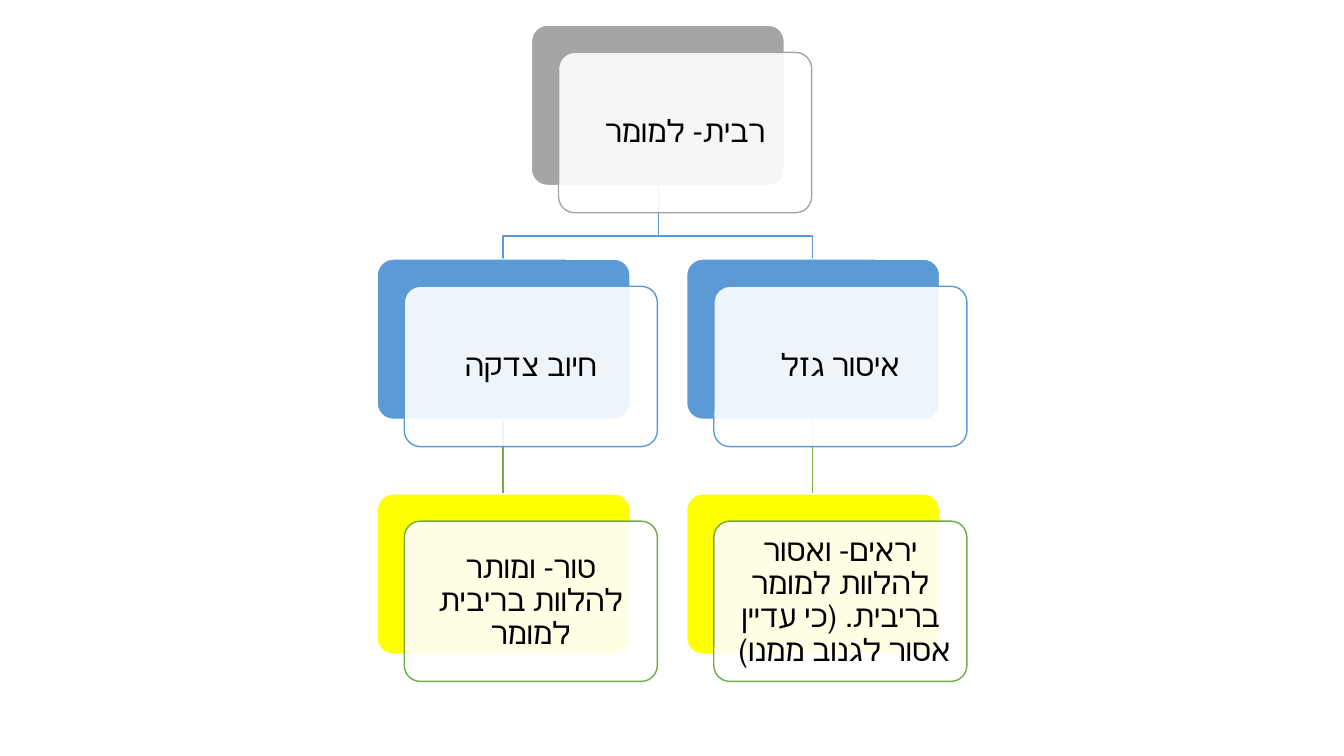
from pptx import Presentation
from pptx.dml.color import RGBColor
from pptx.enum.shapes import MSO_SHAPE
from pptx.enum.text import MSO_ANCHOR, PP_ALIGN
from pptx.oxml.ns import qn
from pptx.util import Pt
from lxml import etree

ROUNDED = MSO_SHAPE.ROUNDED_RECTANGLE
MIDDLE, CENTER = MSO_ANCHOR.MIDDLE, PP_ALIGN.CENTER
PX = 9144  # 100 px to the inch
CARD_W, CARD_H = 251, 159
SHIFT = 27  # offset of the front card from the back card
INSET = 5  # from the front card to its text
LEFT, MID, RIGHT = 374, 527, 681
ROWS = [25, 257, 490]
GRAY, BLUE, GREEN, YELLOW, WHITE = "A5A5A5", "5B9BD5", "70AD47", "FFFF00", "FFFFFF"


def rgb(value):
    return RGBColor.from_string(value)


def add_card(x, y, fill, line):
    sp = s.shapes.add_shape(ROUNDED, x * PX, y * PX, CARD_W * PX, CARD_H * PX)
    sp.shadow.inherit = False
    sp.adjustments[0] = 0.1
    sp.fill.solid()
    sp.fill.fore_color.rgb = rgb(fill)
    sp.line.color.rgb = rgb(line)
    sp.line.width = Pt(1)
    return sp


prs = Presentation()
prs.slide_width, prs.slide_height = 1333 * PX, 750 * PX
s = prs.slides.add_slide(prs.slide_layouts[6])

# Branches from the root, and lines down to the rulings
root_x, root_y, fork_y = 653, ROWS[0] + CARD_H, 234
for x in (LEFT, RIGHT):
    child_x = x + CARD_W // 2
    branch = [(root_x, root_y), (root_x, fork_y), (child_x, fork_y), (child_x, ROWS[1])]
    drop = [(child_x, ROWS[1] + CARD_H), (child_x, ROWS[2])]
    for points, color in ((drop, GREEN), (branch, BLUE)):
        builder = s.shapes.build_freeform(*points[0], scale=PX)
        builder.add_line_segments(points[1:], close=False)
        sp = builder.convert_to_shape()
        sp.shadow.inherit = False
        sp.fill.background()
        sp.line.color.rgb = rgb(color)
        sp.line.width = Pt(1)

# Cards: column, row, back fill, front outline, text
cards = [
    (MID, 0, GRAY, GRAY, "רבית- למומר"),
    (RIGHT, 1, BLUE, BLUE, "איסור גזל"),
    (RIGHT, 2, YELLOW, GREEN, "יראים- ואסור להלוות למומר בריבית. (כי עדיין אסור לגנוב ממנו) "),
    (LEFT, 1, BLUE, BLUE, "חיוב צדקה"),
    (LEFT, 2, YELLOW, GREEN, "טור- ומותר להלוות בריבית למומר"),
]
frame_format = {"word_wrap": True, "vertical_anchor": MIDDLE}
frame_format.update({f"margin_{side}": 9 * PX for side in ("left", "top", "right", "bottom")})
font_format = {"name": "Calibri", "size": Pt(22)}

for x, row, fill, line, text in cards:
    y = ROWS[row]
    add_card(x, y, fill, WHITE)
    x, y = x + SHIFT, y + SHIFT
    front = add_card(x, y, WHITE, line)
    color = front.fill._xPr.find(".//" + qn("a:srgbClr"))
    etree.SubElement(color, qn("a:alpha"), val="90000")

    label = s.shapes.add_textbox((x + INSET) * PX, (y + INSET) * PX,
                                 (CARD_W - 2 * INSET) * PX, (CARD_H - 2 * INSET) * PX)
    tf = label.text_frame
    for name, value in frame_format.items():
        setattr(tf, name, value)
    p = tf.paragraphs[0]
    p.alignment, p.line_spacing = CENTER, 0.9
    p._p.get_or_add_pPr().set("rtl", "1")
    r = p.add_run()
    r.text = text
    for name, value in font_format.items():
        setattr(r.font, name, value)
    r.font.color.rgb = rgb("000000")
    etree.SubElement(r._r.get_or_add_rPr(), qn("a:cs"), typeface="+mn-cs")

prs.save("out.pptx")
